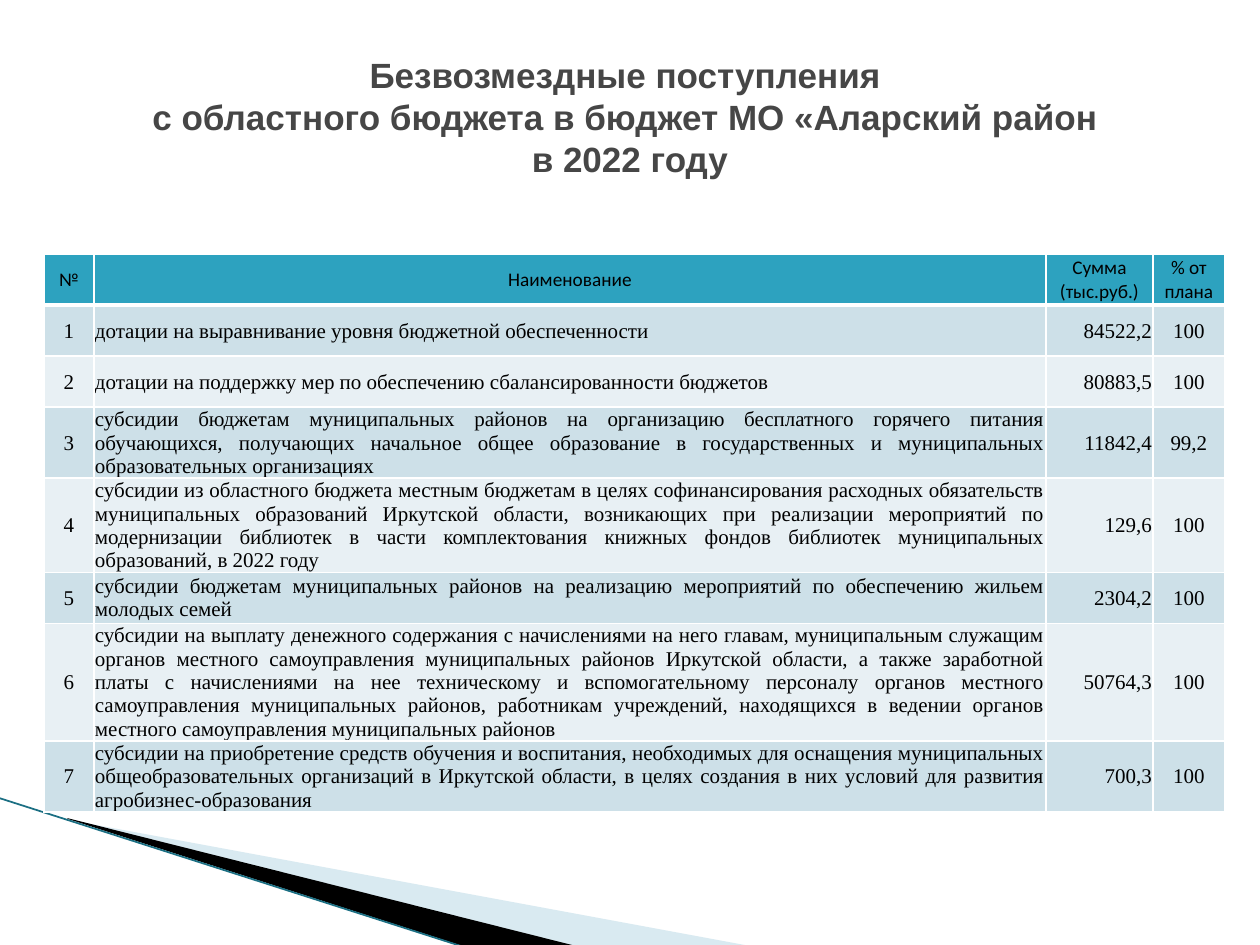
import pptx
import pptx.dml.color
import pptx.enum.text
import pptx.oxml
import pptx.oxml.ns
import pptx.util
import lxml.etree

ALIGN = pptx.enum.text.PP_ALIGN
MID = pptx.enum.text.MSO_ANCHOR.MIDDLE
SCALE = 914400 / 126
qn = pptx.oxml.ns.qn

TITLE = ("Безвозмездные поступления \v"
         "с областного бюджета в бюджет МО «Аларский район \v"
         "в 2022 году")
HEAD = ["№", "Наименование", "Сумма\n(тыс.руб.)", "% от плана"]
GRANTS = [
    ("дотации на выравнивание уровня бюджетной обеспеченности", "84522,2", "100"),
    ("дотации на поддержку мер по обеспечению сбалансированности бюджетов", "80883,5", "100"),
    ("субсидии бюджетам муниципальных районов на организацию бесплатного горячего "
     "питания обучающихся, получающих начальное общее образование в государственных "
     "и муниципальных образовательных организациях", "11842,4", "99,2"),
    ("субсидии из областного бюджета местным бюджетам в целях софинансирования "
     "расходных обязательств муниципальных образований Иркутской области, возникающих "
     "при реализации мероприятий по модернизации библиотек в части комплектования "
     "книжных фондов библиотек муниципальных образований, в 2022 году ", "129,6", "100"),
    ("субсидии бюджетам муниципальных районов на реализацию мероприятий по "
     "обеспечению жильем молодых семей", "2304,2", "100"),
    ("субсидии на выплату денежного содержания с начислениями на него главам, "
     "муниципальным служащим органов местного самоуправления муниципальных районов "
     "Иркутской области, а также заработной платы с начислениями на нее техническому "
     "и вспомогательному персоналу органов местного самоуправления муниципальных "
     "районов, работникам учреждений, находящихся в ведении органов местного "
     "самоуправления муниципальных районов ", "50764,3", "100"),
    ("субсидии на приобретение средств обучения и воспитания, необходимых для "
     "оснащения муниципальных общеобразовательных организаций в Иркутской области, "
     "в целях создания в них условий для развития агробизнес-образования ", "700,3", "100"),
]


def px(num):
    return round(num * SCALE)


def hue(code):
    return pptx.dml.color.RGBColor.from_string(code)


def put(item, vals):
    for key, val in vals.items():
        setattr(item, key, val)


class Page:
    fonts = {
        "title": dict(name="Arial", size=pptx.util.Pt(20), bold=True),
        "head": dict(name="Calibri", size=pptx.util.Pt(11), bold=False),
        "body": dict(name="Times New Roman", size=pptx.util.Pt(12), bold=False),
    }
    inset = dict(margin_left=px(1), margin_right=px(1), margin_top=px(1),
                 margin_bottom=0, vertical_anchor=MID)

    def __init__(self, deck):
        self.slide = deck.slides.add_slide(deck.slide_layouts[6])
        self.shapes = self.slide.shapes

    def words(self, frame, text, kind, align, color):
        frame.text = text
        for para in frame.paragraphs:
            para.alignment = align
            put(para.font, self.fonts[kind])
            para.font.color.rgb = hue(color)

    def text(self, box, text, kind, align, color):
        frame = self.shapes.add_textbox(*map(px, box)).text_frame
        put(frame, dict(word_wrap=True, vertical_anchor=MID))
        self.words(frame, text, kind, align, color)

    def wedge(self, points, color, alpha=100):
        outline = self.shapes.build_freeform(*points[0], scale=SCALE)
        outline.add_line_segments(points[1:], close=True)
        shape = outline.convert_to_shape()
        shape.shadow.inherit = False
        shape.fill.solid()
        shape.fill.fore_color.rgb = hue(color)
        shape.line.fill.background()
        if alpha < 100:
            node = shape._element.spPr.find(".//" + qn("a:srgbClr"))
            lxml.etree.SubElement(node, qn("a:alpha"), val=str(alpha * 1000))

    def line(self, ends, color, width):
        line = self.shapes.add_connector(1, *map(px, ends))
        line.line.color.rgb = hue(color)
        line.line.width = pptx.util.Pt(width)
        lxml.etree.SubElement(line._element.spPr, qn("a:effectLst"))

    def edge(self, cell, side, width):
        props = cell._tc.get_or_add_tcPr()
        node = lxml.etree.SubElement(props, qn("a:ln" + side), w=str(pptx.util.Pt(width)))
        fill = lxml.etree.SubElement(node, qn("a:solidFill"))
        lxml.etree.SubElement(fill, qn("a:srgbClr"), val="FFFFFF")

    def table(self, left, top, cols, high, rows, aligns):
        size = (left, top, sum(cols), high * len(rows))
        table = self.shapes.add_table(len(rows), len(cols), *map(px, size)).table
        put(table, dict(first_row=False, horz_banding=False))
        for col, wide in zip(table.columns, cols):
            col.width = px(wide)
        for i, row in enumerate(rows):
            table.rows[i].height = px(high)
            fill = ("E8F0F4", "CDE0E8")[i % 2] if i else "2DA2BF"
            for j, text in enumerate(row):
                cell = table.cell(i, j)
                put(cell, self.inset)
                for side in "LRTB":
                    thick = (i, side) in ((0, "B"), (1, "T"))
                    self.edge(cell, side, 3 if thick else 1)
                cell.fill.solid()
                cell.fill.fore_color.rgb = hue(fill)
                self.words(cell.text_frame, text, "body" if i else "head",
                           aligns[j] if i else ALIGN.CENTER, "000000")


def main():
    deck = pptx.Presentation()
    put(deck, dict(slide_width=px(1260), slide_height=px(945)))
    page = Page(deck)
    page.wedge([(69, 820), (750, 946), (575, 946), (69, 819)], "A0CBDC", 40)
    page.wedge([(67, 818), (576, 946), (469, 948), (68, 819)], "000000")
    page.line((-1, 798, 467, 948), "1B6F83", 1)
    rows = [HEAD] + [(str(n), *grant) for n, grant in enumerate(GRANTS, 1)]
    page.table(44, 254, (50, 952, 107, 72), 51, rows,
               (ALIGN.CENTER, ALIGN.JUSTIFY, ALIGN.RIGHT, ALIGN.CENTER))
    page.text((63, 38, 1134, 156), TITLE, "title", ALIGN.CENTER, "464646")
    deck.save("out.pptx")


if __name__ == "__main__":
    main()
